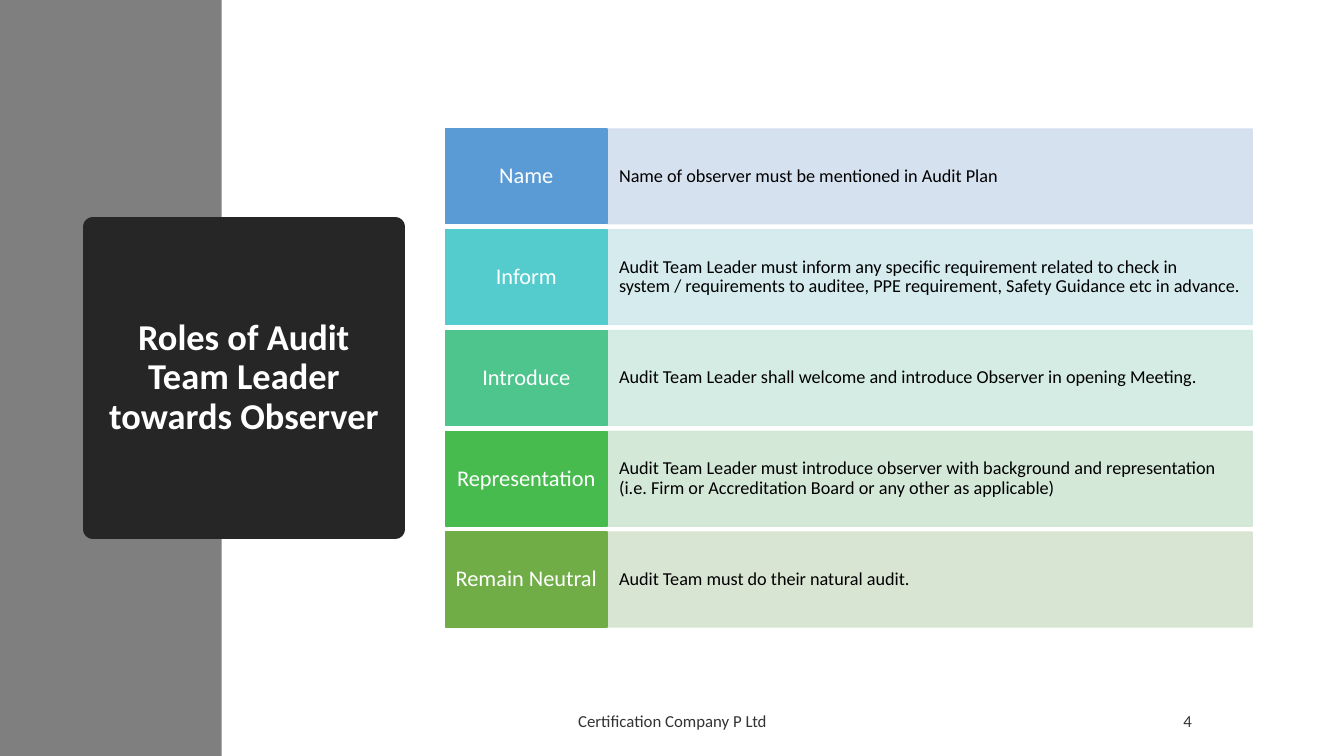
import pptx
import pptx.dml.color
import pptx.enum.shapes
import pptx.enum.text
import pptx.oxml
import pptx.oxml.ns
import pptx.util

RGBColor = pptx.dml.color.RGBColor
Inches = pptx.util.Inches
Align = pptx.enum.text.PP_ALIGN

WIDTH, HEIGHT = 13.33, 7.5
FONT = "Calibri"
WHITE = RGBColor(0xFF, 0xFF, 0xFF)
BLACK = RGBColor(0x00, 0x00, 0x00)
PANEL_GREY = RGBColor(0x7F, 0x7F, 0x7F)
TITLE_DARK = RGBColor(0x26, 0x26, 0x26)
FOOTER_GREY = RGBColor(0x33, 0x33, 0x33)

TITLE = "Roles of Audit Team Leader towards Observer"
ROLES = [
    ("Name", "Name of observer must be mentioned in Audit Plan",
     RGBColor(0x5B, 0x9B, 0xD5), RGBColor(0xD2, 0xDE, 0xEF)),
    ("Inform", "Audit Team Leader must inform any specific requirement related to check in "
     "system / requirements to auditee, PPE requirement, Safety Guidance etc in advance.",
     RGBColor(0x54, 0xCC, 0xCD), RGBColor(0xD1, 0xE9, 0xED)),
    ("Introduce", "Audit Team Leader shall welcome and introduce Observer in opening Meeting.",
     RGBColor(0x4D, 0xC5, 0x8D), RGBColor(0xD0, 0xEA, 0xE1)),
    ("Representation", "Audit Team Leader must introduce observer with background and "
     "representation (i.e. Firm or Accreditation Board or any other as applicable)",
     RGBColor(0x48, 0xBB, 0x4F), RGBColor(0xD0, 0xE6, 0xD4)),
    ("Remain Neutral", "Audit Team must do their natural audit.",
     RGBColor(0x70, 0xAD, 0x47), RGBColor(0xD5, 0xE3, 0xCF)),
]


def write_text(shape, text, size, color, align=Align.LEFT, bold=False, spacing=0.9,
               insets=(0.1, 0.05)):
    """Write one formatted, vertically centred paragraph into a shape."""
    frame = shape.text_frame
    frame.word_wrap = True
    frame.auto_size = pptx.enum.text.MSO_AUTO_SIZE.NONE
    frame.vertical_anchor = pptx.enum.text.MSO_ANCHOR.MIDDLE
    frame.margin_left = frame.margin_right = Inches(insets[0])
    frame.margin_top = frame.margin_bottom = Inches(insets[1])
    paragraph = frame.paragraphs[0]
    paragraph.alignment = align
    paragraph.line_spacing = spacing
    run = paragraph.add_run()
    run.text = text
    run.font.name = FONT
    run.font.size = pptx.util.Pt(size)
    run.font.bold = bold
    run.font.color.rgb = color


def paint(shape, color, line_width=1, opacity=100):
    """Give a shape one colour for its fill and line."""
    shape.fill.solid()
    shape.fill.fore_color.rgb = color
    shape.line.color.rgb = color
    shape.line.width = pptx.util.Pt(line_width)
    if opacity < 100:
        for color_element in shape.element.spPr.iter(pptx.oxml.ns.qn("a:srgbClr")):
            alpha = pptx.oxml.parse_xml(
                f'<a:alpha {pptx.oxml.ns.nsdecls("a")} val="{opacity * 1000}"/>')
            color_element.append(alpha)


def add_box(slide, box, color, **format_options):
    """Add a painted rectangle at a box given in inches."""
    shape = slide.shapes.add_shape(
        pptx.enum.shapes.MSO_SHAPE.RECTANGLE, *map(Inches, box))
    shape.shadow.inherit = False
    paint(shape, color, **format_options)
    return shape


def add_side_panel(slide, box):
    """Draw the grey band on the left."""
    add_box(slide, box, PANEL_GREY).line.fill.background()


def add_title(slide, box):
    """Place the title placeholder as a dark block above the side panel."""
    title = slide.shapes.title
    title.left, title.top, title.width, title.height = map(Inches, box)
    paint(title, TITLE_DARK, line_width=13.75)
    write_text(title, TITLE, 26, WHITE, align=Align.CENTER, bold=True)
    title.element.getparent().append(title.element)


def add_roles(slide, box):
    """Stack one label and description row for each role."""
    left, top, width, height = box
    pitch = height / len(ROLES)
    row_height = pitch * 0.94
    label_width = width / 5
    for index, (label, description, strong, pale) in enumerate(ROLES):
        row_top = top + index * pitch
        body = add_box(slide, (left + label_width, row_top, width - label_width, row_height),
                       pale, opacity=90)
        write_text(body, description, 13, BLACK, insets=(0.12, 0.24))
        head = add_box(slide, (left, row_top, label_width, row_height), strong)
        write_text(head, label, 16, WHITE, align=Align.CENTER, insets=(0.08, 0.09))


def add_footer(slide, box):
    """Write the company name and the page number along the bottom."""
    left, top, width, height = box
    name_width = width * 0.5625
    parts = [
        ("Certification Company P Ltd", left, name_width, Align.CENTER),
        ("4", left + name_width, width * 0.375, Align.RIGHT),
    ]
    for text, part_left, part_width, align in parts:
        text_box = slide.shapes.add_textbox(*map(Inches, (part_left, top, part_width, height)))
        write_text(text_box, text, 12, FOOTER_GREY, align=align, spacing=1.0)


def main():
    """Build the slide and save it."""
    presentation = pptx.Presentation()
    presentation.slide_width = Inches(WIDTH)
    presentation.slide_height = Inches(HEIGHT)
    slide = presentation.slides.add_slide(presentation.slide_layouts[5])
    add_side_panel(slide, (0, 0, WIDTH * 0.165, HEIGHT))
    add_title(slide, (0.92, HEIGHT * 0.3, 3, HEIGHT * 0.4))
    add_footer(slide, (4.42, 6.95, 8, 0.4))
    add_roles(slide, (4.42, 1.28, 8, 5))
    presentation.save("out.pptx")


if __name__ == "__main__":
    main()
